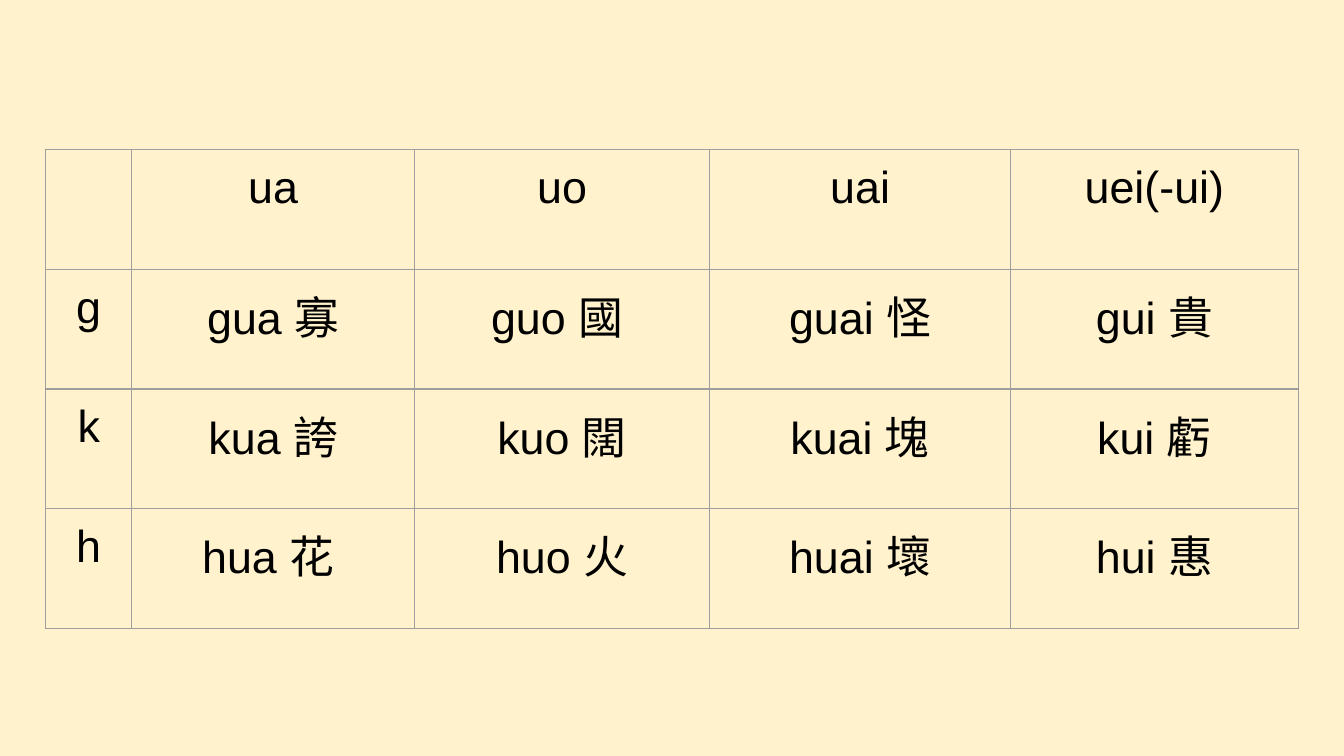
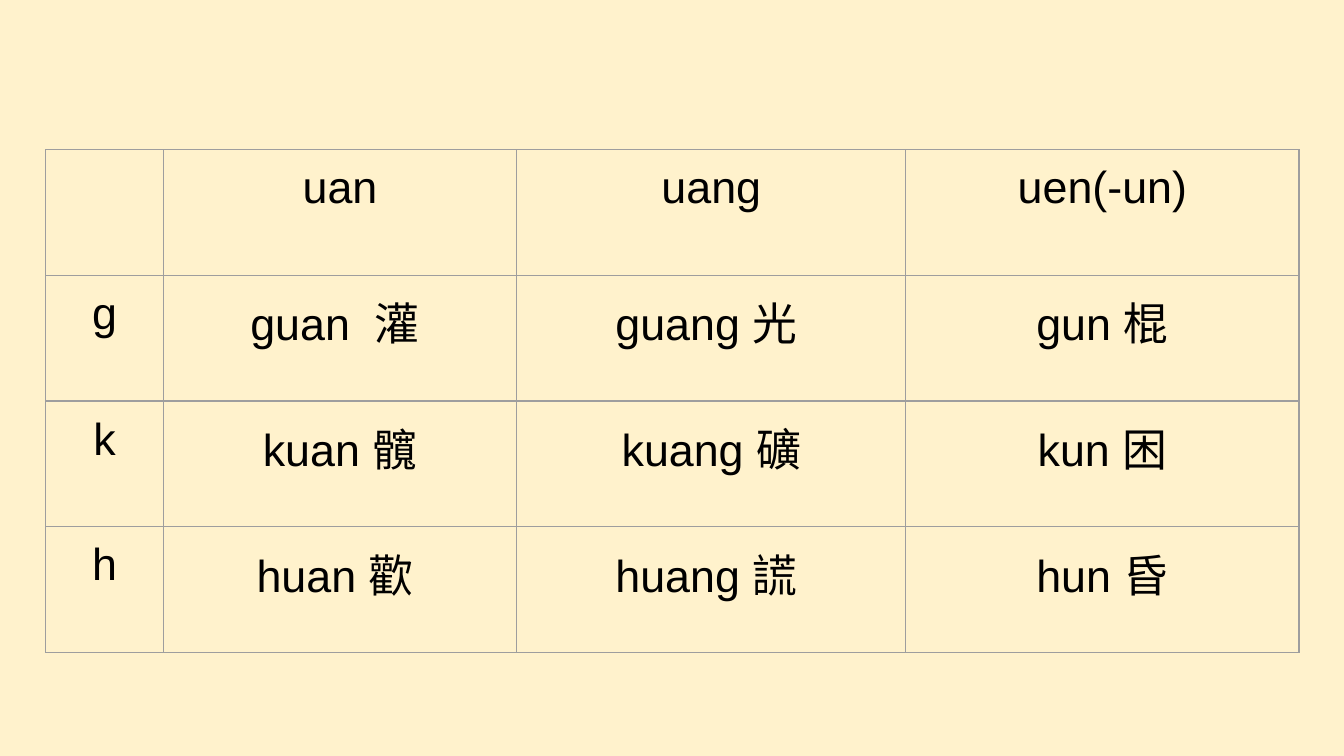
from dataclasses import dataclass

from lxml import etree
from pptx import Presentation
from pptx.dml.color import RGBColor
from pptx.enum.text import MSO_ANCHOR, PP_ALIGN
from pptx.oxml.ns import qn
from pptx.presentation import Presentation as Deck
from pptx.table import _Cell as Cell
from pptx.util import Emu, Pt

CENTER = PP_ALIGN.CENTER
TOP = MSO_ANCHOR.TOP
BLANK_LAYOUT = 6
EMU_PER_PX = 4572


@dataclass(frozen=True)
class Theme:
    background: str = "FFF2CC"
    text: str = "000000"
    border: str = "9E9E9E"
    font: str = "Arial"
    size: int = 24
    border_width: float = 0.75


@dataclass(frozen=True)
class SyllableTable:
    column_widths: tuple[int, ...]
    row_height: int
    finals: tuple[str, ...]
    syllables: dict[str, tuple[str, ...]]

    def rows(self) -> list[tuple[str, ...]]:
        body = [(initial, *words) for initial, words in self.syllables.items()]
        return [("", *self.finals), *body]


THEME = Theme()
PAGE_WIDTH, PAGE_HEIGHT = 2000, 1125
TABLE_LEFT, TABLE_TOP = 68, 223
CELL_MARGIN = 20

TABLES = (
    SyllableTable(
        column_widths=(128, 421, 439, 448, 428),
        row_height=178,
        finals=("ua", "uo", "uai", "uei(-ui)"),
        syllables={
            "g": ("gua 寡", "guo 國 ", "guai 怪", "gui 貴"),
            "k": ("kua 誇", "kuo 闊", "kuai 塊", "kui 虧"),
            "h": ("hua 花 ", "huo 火", "huai 壞", "hui 惠"),
        },
    ),
    SyllableTable(
        column_widths=(175, 526, 579, 585),
        row_height=187,
        finals=("uan", "uang", "uen(-un)"),
        syllables={
            "g": ("guan  灌 ", "guang 光 ", "gun 棍"),
            "k": ("kuan 髖", "kuang 礦", "kun 困"),
            "h": ("huan 歡 ", "huang 謊 ", "hun 昏"),
        },
    ),
)


def px(length: int) -> Emu:
    return Emu(length * EMU_PER_PX)


def add_borders(cell: Cell) -> None:
    properties = cell._tc.get_or_add_tcPr()
    for position, side in enumerate(("a:lnL", "a:lnR", "a:lnT", "a:lnB")):
        line = etree.Element(qn(side), w=str(Pt(THEME.border_width)))
        fill = etree.SubElement(line, qn("a:solidFill"))
        etree.SubElement(fill, qn("a:srgbClr"), val=THEME.border)
        properties.insert(position, line)


def format_cell(cell: Cell, text: str) -> None:
    cell.fill.background()
    cell.vertical_anchor = TOP
    cell.margin_left = cell.margin_right = px(CELL_MARGIN)
    cell.margin_top = cell.margin_bottom = px(CELL_MARGIN)
    add_borders(cell)
    cell.text = text
    paragraph = cell.text_frame.paragraphs[0]
    paragraph.alignment = CENTER
    paragraph.font.name = THEME.font
    paragraph.font.size = Pt(THEME.size)
    paragraph.font.color.rgb = RGBColor.from_string(THEME.text)


def add_table_page(deck: Deck, content: SyllableTable) -> None:
    page = deck.slides.add_slide(deck.slide_layouts[BLANK_LAYOUT])
    rows = content.rows()
    table = page.shapes.add_table(
        len(rows),
        len(content.column_widths),
        px(TABLE_LEFT),
        px(TABLE_TOP),
        px(sum(content.column_widths)),
        px(content.row_height * len(rows)),
    ).table
    table.first_row = False
    table.horz_banding = False
    for column, width in zip(table.columns, content.column_widths):
        column.width = px(width)
    for table_row, texts in zip(table.rows, rows):
        table_row.height = px(content.row_height)
        for cell, text in zip(table_row.cells, texts):
            format_cell(cell, text)


def main() -> None:
    deck = Presentation()
    deck.slide_width, deck.slide_height = px(PAGE_WIDTH), px(PAGE_HEIGHT)
    background = deck.slide_master.background.fill
    background.solid()
    background.fore_color.rgb = RGBColor.from_string(THEME.background)
    for content in TABLES:
        add_table_page(deck, content)
    deck.save("out.pptx")


if __name__ == "__main__":
    main()
